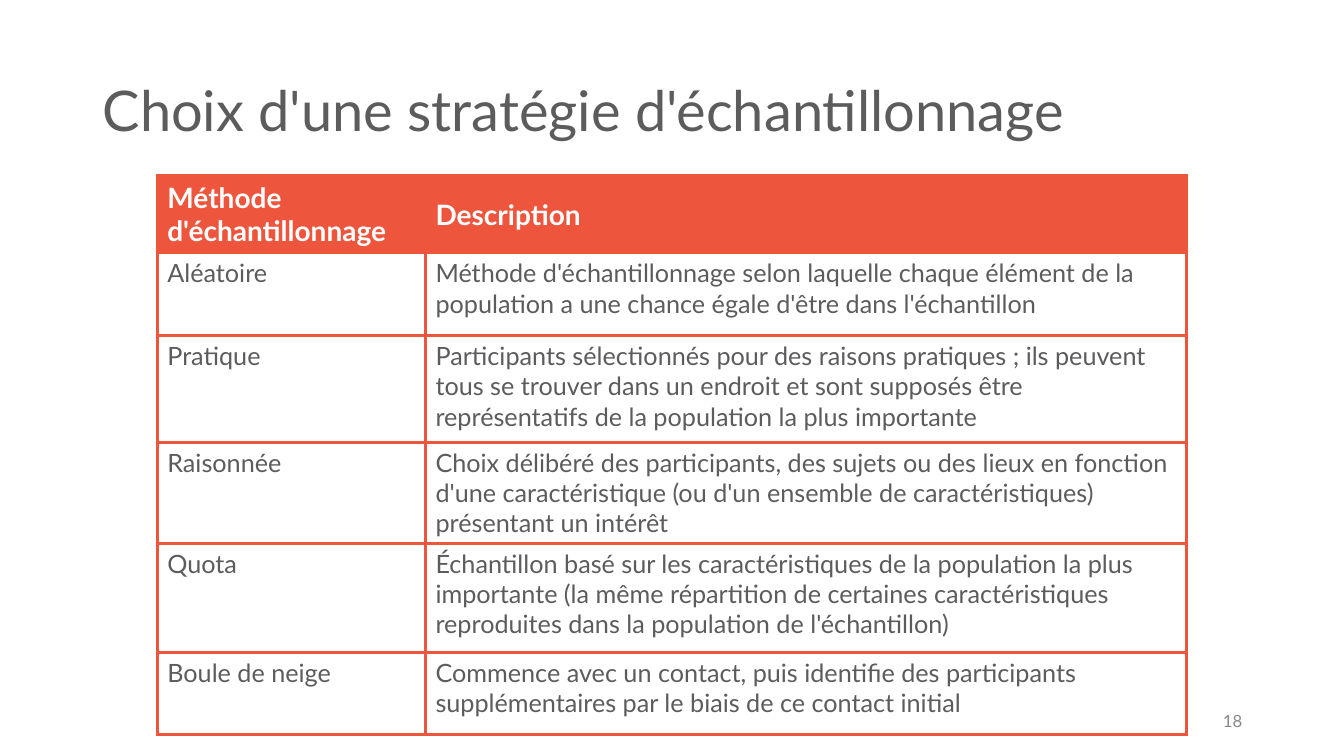
import pptx
import pptx.dml.color
import pptx.enum.text
import pptx.oxml
import pptx.oxml.ns
import pptx.util

PX = 9144
FONT = "Lato"
GREY, ORANGE, WHITE, PALE = "5C5C5C", "ED553D", "FFFFFF", "898989"
COLUMNS = [266, 755]
ROW_HEIGHTS = [77, 82, 106, 100, 108, 82]
METHODS = [
    ("Méthode d'échantillonnage", "Description"),
    ("Aléatoire",
     "Méthode d'échantillonnage selon laquelle chaque élément de la "
     "population a une chance égale d'être dans l'échantillon"),
    ("Pratique",
     "Participants sélectionnés pour des raisons pratiques ; ils peuvent "
     "tous se trouver dans un endroit et sont supposés être "
     "représentatifs de la population la plus importante"),
    ("Raisonnée",
     "Choix délibéré des participants, des sujets ou des lieux en fonction "
     "d'une caractéristique (ou d'un ensemble de caractéristiques) "
     "présentant un intérêt"),
    ("Quota",
     "Échantillon basé sur les caractéristiques de la population la plus "
     "importante (la même répartition de certaines caractéristiques "
     "reproduites dans la population de l'échantillon)"),
    ("Boule de neige",
     "Commence avec un contact, puis identifie des participants "
     "supplémentaires par le biais de ce contact initial"),
]


def px(n):
    """Turn whole px into EMU, at 100 px to the inch."""
    return pptx.util.Emu(n * PX)


def rgb(value):
    """Return the colour for a hex string."""
    return pptx.dml.color.RGBColor.from_string(value)


def write(tf, text, size, color, bold=False):
    """Fill a text frame with one formatted paragraph and return it."""
    tf.text = text
    tf.word_wrap = True
    p = tf.paragraphs[0]
    for r in p.runs:
        r.font.name = FONT
        r.font.size = pptx.util.Pt(size)
        r.font.bold = bold
        r.font.color.rgb = rgb(color)
    return p


def add_text(s, box, text, size, color):
    """Add a vertically centred text box and return its paragraph."""
    tf = s.shapes.add_textbox(*map(px, box)).text_frame
    tf.vertical_anchor = pptx.enum.text.MSO_ANCHOR.MIDDLE
    return write(tf, text, size, color)


def set_borders(cell, color, width):
    """Draw a solid line on all four sides of a cell."""
    tc_pr = cell._tc.get_or_add_tcPr()
    for side in ("lnL", "lnR", "lnT", "lnB"):
        tc_pr.append(pptx.oxml.parse_xml(
            f'<a:{side} {pptx.oxml.ns.nsdecls("a")} w="{pptx.util.Pt(width)}">'
            f'<a:solidFill><a:srgbClr val="{color}"/></a:solidFill></a:{side}>'))


def format_cell(cell, text, header):
    """Write and style a header or body cell."""
    set_borders(cell, ORANGE, 2.25)
    if header:
        cell.fill.solid()
        cell.fill.fore_color.rgb = rgb(ORANGE)
        cell.vertical_anchor = pptx.enum.text.MSO_ANCHOR.MIDDLE
        write(cell.text_frame, text, 20, WHITE, True)
    else:
        cell.fill.background()
        write(cell.text_frame, text, 18, GREY)


def add_methods_table(s, left, top):
    """Add the table of sampling methods."""
    size = (sum(COLUMNS), sum(ROW_HEIGHTS))
    table = s.shapes.add_table(len(METHODS), len(COLUMNS),
                               *map(px, (left, top, *size))).table
    for column, width in zip(table.columns, COLUMNS):
        column.width = px(width)
    for i, (row, texts) in enumerate(zip(table.rows, METHODS)):
        row.height = px(ROW_HEIGHTS[i])
        for cell, text in zip(row.cells, texts):
            format_cell(cell, text, i == 0)


def main():
    """Build the slide and save it."""
    prs = pptx.Presentation()
    prs.slide_width, prs.slide_height = px(1333), px(750)
    s = prs.slides.add_slide(prs.slide_layouts[6])
    title = add_text(s, (92, 40, 1150, 145),
                     "Choix d'une stratégie d'échantillonnage", 40, GREY)
    title.line_spacing = 0.9
    number = add_text(s, (942, 695, 300, 40), "18", 12, PALE)
    number.alignment = pptx.enum.text.PP_ALIGN.RIGHT
    add_methods_table(s, 156, 174)
    prs.save("out.pptx")


if __name__ == "__main__":
    main()
